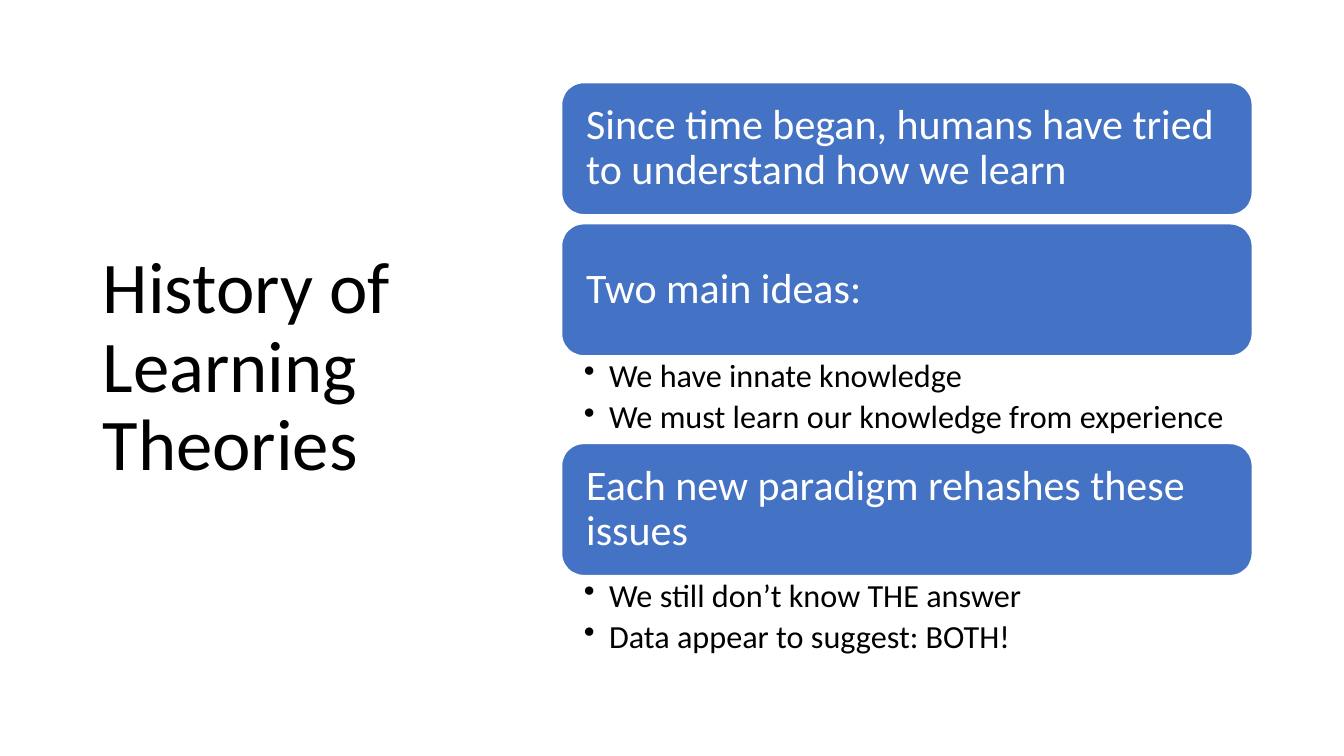
from lxml.etree import SubElement
from pptx import Presentation
from pptx.dml.color import RGBColor
from pptx.enum.shapes import MSO_SHAPE as Shape
from pptx.enum.text import MSO_ANCHOR as Anchor, PP_ALIGN as Align
from pptx.oxml.ns import qn
from pptx.util import Inches, Pt

COLOURS = {"bar": "4472C4", "white": "FFFFFF", "black": "000000"}
FONT = "Calibri"
BAR_HEIGHT, LIST_HEIGHT, BAR_GAP = 1.31, 0.87, 0.09
TOPICS = [
    ("Since time began, humans have tried to understand how we learn", []),
    ("Two main ideas:",
     ["We have innate knowledge", "We must learn our knowledge from experience"]),
    ("Each new paradigm rehashes these issues",
     ["We still don’t know THE answer", "Data appear to suggest: BOTH!"]),
]


def colour(name):
    """Return the named colour."""
    return RGBColor.from_string(COLOURS[name])


def set_frame(shape, margins, anchor):
    """Set wrapping, margins and anchor, and return the text frame."""
    frame = shape.text_frame
    frame.word_wrap = True
    frame.vertical_anchor = anchor
    (frame.margin_left, frame.margin_top,
     frame.margin_right, frame.margin_bottom) = map(Inches, margins)
    return frame


def write(para, text, size, ink):
    """Write one left-aligned paragraph."""
    para.text = text
    para.alignment = Align.LEFT
    para.line_spacing = 0.9
    para.font.name = FONT
    para.font.size = Pt(size)
    para.font.color.rgb = colour(ink)


def add_bullet(para):
    """Give a paragraph a hanging round bullet."""
    settings = para._p.get_or_add_pPr()
    settings.set("marL", str(Inches(0.25)))
    settings.set("indent", str(-Inches(0.25)))
    SubElement(settings, qn("a:buChar"), char="•")


def add_title(page, box, text):
    """Place the slide title, centred vertically in its box."""
    title = page.shapes.add_textbox(*map(Inches, box))
    frame = set_frame(title, (0.1, 0.05, 0.1, 0.05), Anchor.MIDDLE)
    write(frame.paragraphs[0], text, 52, "black")


def add_bar(page, box, text):
    """Place a rounded topic bar."""
    bar = page.shapes.add_shape(Shape.ROUNDED_RECTANGLE, *map(Inches, box))
    bar.shadow.inherit = False
    bar.fill.solid()
    bar.fill.fore_color.rgb = colour("bar")
    bar.line.color.rgb = colour("white")
    bar.line.width = Pt(1)
    frame = set_frame(bar, (0.18, 0.18, 0.18, 0.18), Anchor.MIDDLE)
    write(frame.paragraphs[0], text, 30, "white")


def add_points(page, box, points):
    """Place the bulleted points below a bar."""
    area = page.shapes.add_textbox(*map(Inches, box))
    frame = set_frame(area, (0.22, 0.04, 0.23, 0.04), Anchor.TOP)
    for index, point in enumerate(points):
        para = frame.add_paragraph() if index else frame.paragraphs[0]
        add_bullet(para)
        write(para, point, 23, "black")
        para.space_after = Pt(4.6)


def add_topics(page, box, topics):
    """Stack bars and their points from the top of the box."""
    left, top, width = box
    for heading, points in topics:
        add_bar(page, (left, top, width, BAR_HEIGHT), heading)
        top += BAR_HEIGHT
        if points:
            add_points(page, (left, top, width, LIST_HEIGHT), points)
            top += LIST_HEIGHT
        else:
            top += BAR_GAP


def main():
    """Build and save the slide."""
    deck = Presentation()
    deck.slide_width, deck.slide_height = Inches(13.33), Inches(7.5)
    page = deck.slides.add_slide(deck.slide_layouts[6])
    add_title(page, (0.92, 0.61, 3.69, 6.09), "History of Learning Theories")
    add_topics(page, (5.57, 0.82, 6.85), TOPICS)
    deck.save("out.pptx")


if __name__ == "__main__":
    main()
